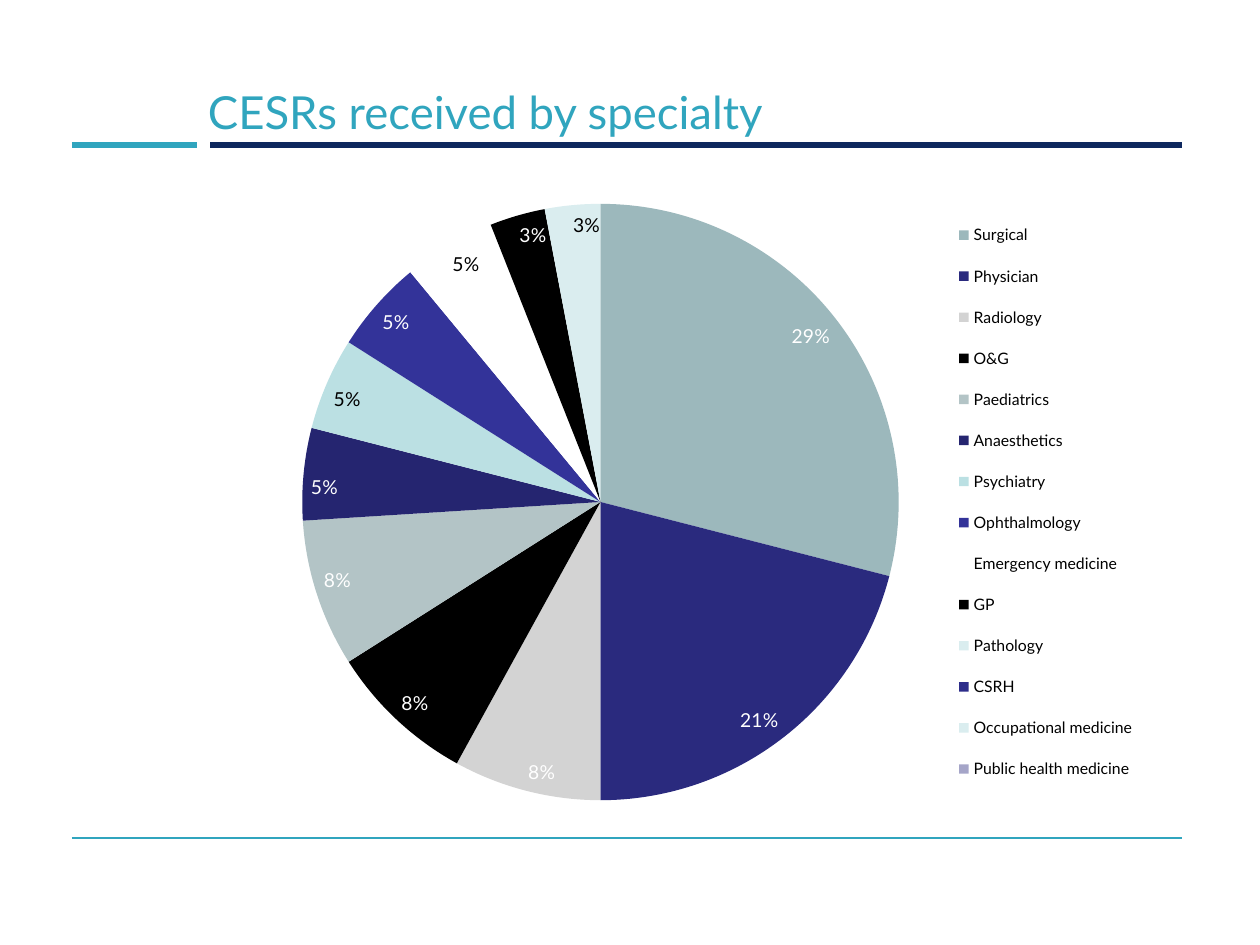
"""Build a slide with a pie chart of CESRs received by specialty."""
from lxml import etree
from pptx import Presentation
from pptx.chart.data import CategoryChartData
from pptx.dml.color import RGBColor
from pptx.enum.chart import XL_CHART_TYPE, XL_LABEL_POSITION, XL_LEGEND_POSITION
from pptx.enum.shapes import MSO_CONNECTOR
from pptx.enum.text import MSO_ANCHOR, PP_ALIGN
from pptx.oxml.ns import qn
from pptx.util import Inches, Pt

PIE = XL_CHART_TYPE.PIE
INSIDE, OUTSIDE = XL_LABEL_POSITION.INSIDE_END, XL_LABEL_POSITION.OUTSIDE_END
RIGHT = XL_LEGEND_POSITION.RIGHT
STRAIGHT = MSO_CONNECTOR.STRAIGHT
MIDDLE, LEFT = MSO_ANCHOR.MIDDLE, PP_ALIGN.LEFT
THEME = {
    "font": "Lato", "teal": "30A5BE", "navy": "0E285E",
    "dark": "000000", "light": "FFFFFF",
    "title": 26, "chart": 10, "legend": 9, "label": 11,
}
ROWS = [
    ("Surgical", 29, "9CB8BC", "light"),
    ("Physician", 21, "2A2A7E", "light"),
    ("Radiology", 8, "D3D3D3", "light"),
    ("O&G ", 8, "000000", "light"),
    ("Paediatrics", 8, "B3C4C6", "light"),
    ("Anaesthetics", 5, "252570", "light"),
    ("Psychiatry", 5, "BBE0E3", "dark"),
    ("Ophthalmology", 5, "333399", "light"),
    ("Emergency medicine", 5, "FFFFFF", "dark"),
    ("GP", 3, "000000", "light"),
    ("Pathology ", 3, "DAEDEF", "dark"),
    ("CSRH", 0, "2D2D8A", "dark"),
    ("Occupational medicine", 0, "DAEDEF", "dark"),
    ("Public health medicine ", 0, "A5A5C8", "dark"),
]
SHIFT = {11: -0.05, 12: 0, 13: 0.05}


def style(font, size, color):
    font.name = THEME["font"]
    font.size = Pt(THEME[size])
    font.color.rgb = RGBColor.from_string(THEME[color])


def layout(parent, spot, **sizes):
    for old in parent.findall(qn("c:layout")):
        parent.remove(old)
    node = etree.Element(qn("c:layout"))
    frame = etree.SubElement(node, qn("c:manualLayout"))
    for name, value in sizes.items():
        etree.SubElement(frame, qn("c:" + name)).set("val", str(value))
    parent.insert(spot, node)


deck = Presentation()
deck.slide_width, deck.slide_height = Inches(10), Inches(7.5)
slide = deck.slides.add_slide(deck.slide_layouts[5])

for x1, x2, y, color, width in (
    (1.67, 9.38, 1.15, "navy", 3),
    (0.57, 1.56, 1.15, "teal", 3),
    (0.57, 9.38, 6.65, "teal", 0.75),
):
    rule = slide.shapes.add_connector(
        STRAIGHT, Inches(x1), Inches(y), Inches(x2), Inches(y))
    rule.line.color.rgb = RGBColor.from_string(THEME[color])
    rule.line.width = Pt(width)
    etree.SubElement(rule._element.spPr, qn("a:effectLst"))

title = slide.shapes.title
title.left, title.top = Inches(1.55), Inches(0.52)
title.width, title.height = Inches(7.83), Inches(0.73)
title.text_frame.text = "CESRs received by specialty"
title.text_frame.vertical_anchor = MIDDLE
head = title.text_frame.paragraphs[0]
head.alignment = LEFT
style(head.runs[0].font, "title", "teal")

data = CategoryChartData()
data.categories = [row[0] for row in ROWS]
data.add_series("Series 1", [row[1] for row in ROWS])
chart = slide.shapes.add_chart(
    PIE, Inches(1.69), Inches(1.25), Inches(7.69), Inches(5.26), data).chart
chart.has_title = False
style(chart.font, "chart", "dark")
chart.has_legend = True
chart.legend.position = RIGHT
chart.legend.include_in_layout = False
style(chart.legend.font, "legend", "dark")
layout(chart.legend._element, 1, xMode="edge", yMode="edge",
       x=0.75, y=0.07, w=0.22, h=0.9)
area = chart._chartSpace.chart.plotArea
layout(area, 0, layoutTarget="inner", xMode="edge", yMode="edge",
       x=0.09, y=0.07, w=0.62, h=0.9)

plot = chart.plots[0]
plot.vary_by_categories = True
series = plot.series[0]
labels = series.data_labels
labels.show_value, labels.show_percentage = False, True
labels.number_format, labels.number_format_is_linked = "0%", False
labels.position = INSIDE
style(labels.font, "label", "light")

for i, (name, value, color, ink) in enumerate(ROWS):
    point = series.points[i]
    point.format.fill.solid()
    point.format.fill.fore_color.rgb = RGBColor.from_string(color)
    point.format.line.fill.background()
    if ink == "dark":
        label = point.data_label
        style(label.font, "label", ink)
        label.position = OUTSIDE if i in SHIFT else INSIDE
        node = series._element.xpath(f"c:dLbls/c:dLbl[c:idx/@val='{i}']")[0]
        node.find(qn("c:showVal")).set("val", "0")
        node.find(qn("c:showPercent")).set("val", "1")
        if i in SHIFT:
            layout(node, 1, x=SHIFT[i], y=0)

deck.save("out.pptx")
